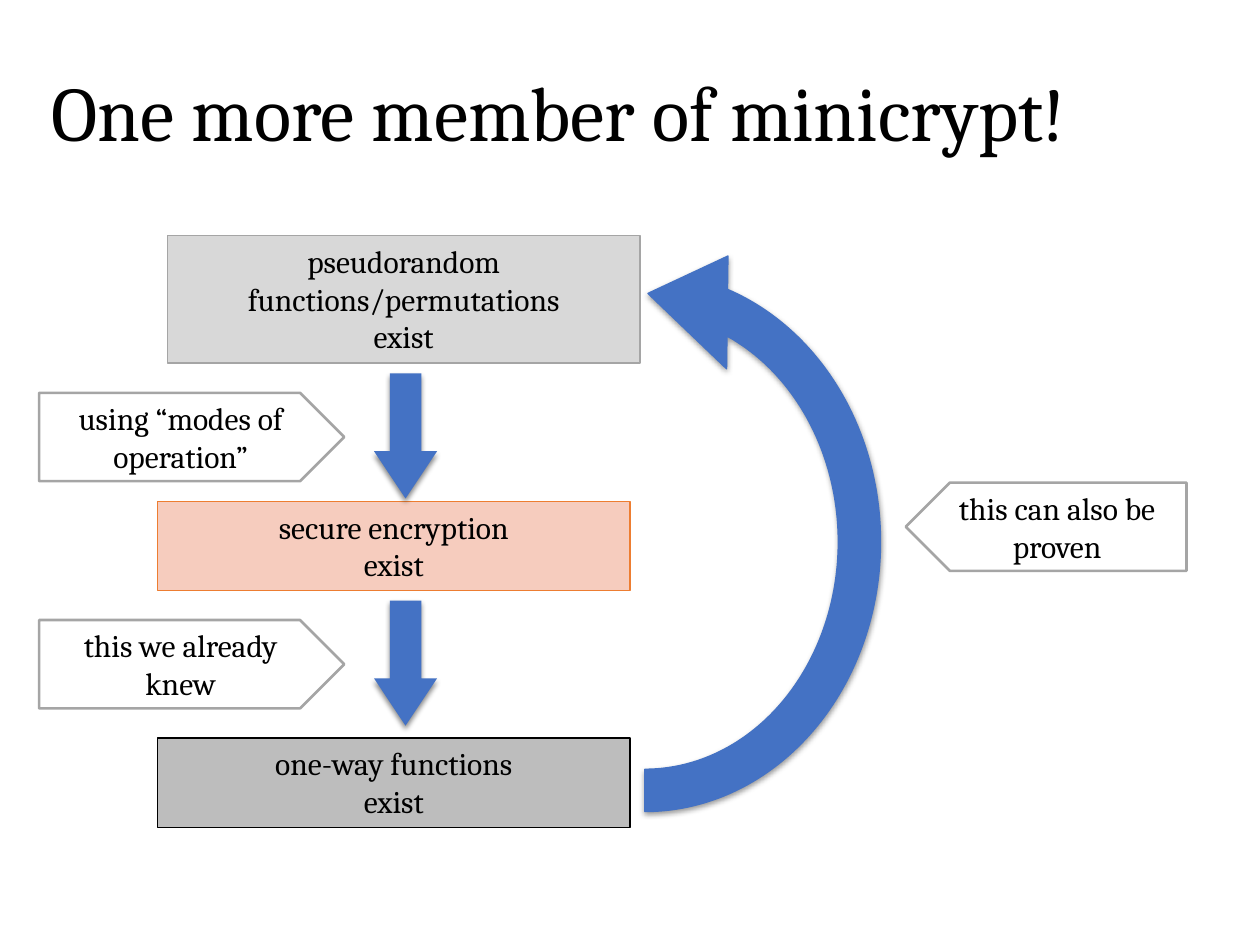
from dataclasses import dataclass

from lxml import etree
from pptx import Presentation
from pptx.dml.color import RGBColor
from pptx.enum.shapes import MSO_SHAPE
from pptx.enum.text import MSO_ANCHOR, MSO_AUTO_SIZE, PP_ALIGN
from pptx.oxml.ns import qn
from pptx.util import Cm, Inches, Pt

RECT = MSO_SHAPE.RECTANGLE
PLATE = MSO_SHAPE.PENTAGON
ARROW = MSO_SHAPE.RIGHT_ARROW
LOOP = MSO_SHAPE.CIRCULAR_ARROW
TOP, MID = MSO_ANCHOR.TOP, MSO_ANCHOR.MIDDLE
LEFT, CENTER = PP_ALIGN.LEFT, PP_ALIGN.CENTER
FIXED, GROW = MSO_AUTO_SIZE.NONE, MSO_AUTO_SIZE.SHAPE_TO_FIT_TEXT


@dataclass(frozen=True)
class Theme:
    """Hold the colours, font and type sizes."""
    font: str = "Cambria"
    head: int = 44
    body: int = 18
    ink: str = "000000"
    white: str = "FFFFFF"
    blue: str = "4472C4"
    edge: str = "A5A5A5"
    light: str = "D8D8D8"
    dark: str = "BDBDBD"
    peach: str = "F6CCBE"
    orange: str = "ED7D31"


THEME = Theme()


def apply(item, values):
    """Set each named attribute of an item."""
    for name, value in values.items():
        setattr(item, name, value)


def write(shape, lines, size, frame, para):
    """Write lines into a shape and format them."""
    apply(shape.text_frame, {"word_wrap": True, **frame})
    shape.text_frame.text = "\n".join(lines)
    for part in shape.text_frame.paragraphs:
        apply(part, para)
        for run in part.runs:
            apply(run.font, {"name": THEME.font, "size": Pt(size)})
            run.font.color.rgb = RGBColor.from_string(THEME.ink)


def draw(slide, kind, box, fill, line=None, width=0.79):
    """Add a flat shape with a fill and an optional line."""
    shape = slide.shapes.add_shape(kind, *map(Cm, box))
    shape.shadow.inherit = False
    shape.fill.solid()
    shape.fill.fore_color.rgb = RGBColor.from_string(fill)
    if line:
        shape.line.color.rgb = RGBColor.from_string(line)
        shape.line.width = Pt(width)
    else:
        shape.line.fill.background()
    return shape


def flip(shape, side):
    """Mirror a shape across one axis, H or V."""
    shape._element.spPr.find(qn("a:xfrm")).set("flip" + side, "1")


def shade(shape, alpha, gap):
    """Give a shape a soft shadow below it."""
    holder = shape._element.spPr.find(qn("a:effectLst"))
    outer = etree.SubElement(holder, qn("a:outerShdw"), blurRad=str(Pt(3)),
                             dist=str(Pt(gap)), dir="5400000", rotWithShape="0")
    color = etree.SubElement(outer, qn("a:srgbClr"), val=THEME.ink)
    etree.SubElement(color, qn("a:alpha"), val=str(alpha * 1000))


def title(slide, box, text):
    """Place and format the title."""
    shape = slide.shapes.title
    apply(shape, dict(zip(("left", "top", "width", "height"), map(Cm, box))))
    write(shape, [text], THEME.head,
          {"vertical_anchor": MID, "auto_size": FIXED},
          {"alignment": LEFT, "line_spacing": 0.9})


def claim(slide, box, lines, fill, line):
    """Draw a box that states what exists."""
    shape = draw(slide, RECT, box, fill, line)
    write(shape, lines, THEME.body,
          {"vertical_anchor": TOP, "auto_size": GROW}, {"alignment": CENTER})
    for part in shape.text_frame.paragraphs:
        apply_indent = part._p.get_or_add_pPr()
        apply_indent.set("marL", str(Cm(1.7)))
        apply_indent.set("indent", str(-Cm(1.7)))


def note(slide, box, text, back=False):
    """Draw a pointed note, facing left when back is set."""
    shape = draw(slide, PLATE, box, THEME.white, THEME.edge, 1.5)
    if back:
        flip(shape, "H")
    write(shape, [text], THEME.body, {"vertical_anchor": MID},
          {"alignment": CENTER})


def turn(slide, kind, box, angle, bends, line=None):
    """Draw a blue arrow turned a quarter so that it fills the box."""
    left, top, wide, high = box
    shift = (wide - high) / 2
    shape = draw(slide, kind, (left + shift, top - shift, high, wide),
                 THEME.blue, line)
    shape.rotation = angle
    for index, bend in enumerate(bends):
        shape.adjustments[index] = bend
    return shape


def chain(slide, box):
    """Draw the claims, the arrows between them and the notes."""
    left, top, wide, high = box
    claim(slide, (left + 0.2, top, wide, 2.57),
          ["pseudorandom", "functions/permutations", "exist"],
          THEME.light, THEME.edge)
    claim(slide, (left, top + 5.36, wide, 1.8),
          ["secure encryption", "exist"], THEME.peach, THEME.orange)
    claim(slide, (left, top + high - 1.8, wide, 1.8),
          ["one-way functions", "exist"], THEME.dark, THEME.ink)
    steps = ((2.78, "using “modes of operation”"),
             (7.36, "this we already knew"))
    for drop, text in steps:
        arrow = turn(slide, ARROW, (left + 4.36, top + drop, 1.27, 2.52),
                     90, (0.5, 0.75))
        shade(arrow, 45, 2)
        note(slide, (left - 2.39, top + drop + 0.39, 6.15, 1.78), text)


def back(slide, box):
    """Draw the arrow that leads back to the top, and its note."""
    left, top, wide, high = box
    arrow = turn(slide, LOOP, box, 270,
                 (0.078, 11.423, 204.158, 108, 0.104), THEME.blue)
    flip(arrow, "V")
    shade(arrow, 40, 1.4)
    note(slide, (left + wide - 0.2, top + 4.95, 5.66, 1.78),
         "this can also be proven", True)


def main():
    """Build and save the slide."""
    deck = Presentation()
    apply(deck, {"slide_width": Inches(10), "slide_height": Inches(7.5)})
    slide = deck.slides.add_slide(deck.slide_layouts[5])
    title(slide, (0.79, 0.76, 24.03, 3.18), "One more member of minicrypt!")
    chain(slide, (3.18, 4.75, 9.52, 11.93))
    back(slide, (7.54, 4.78, 10.92, 12.29))
    deck.save("out.pptx")


if __name__ == "__main__":
    main()
